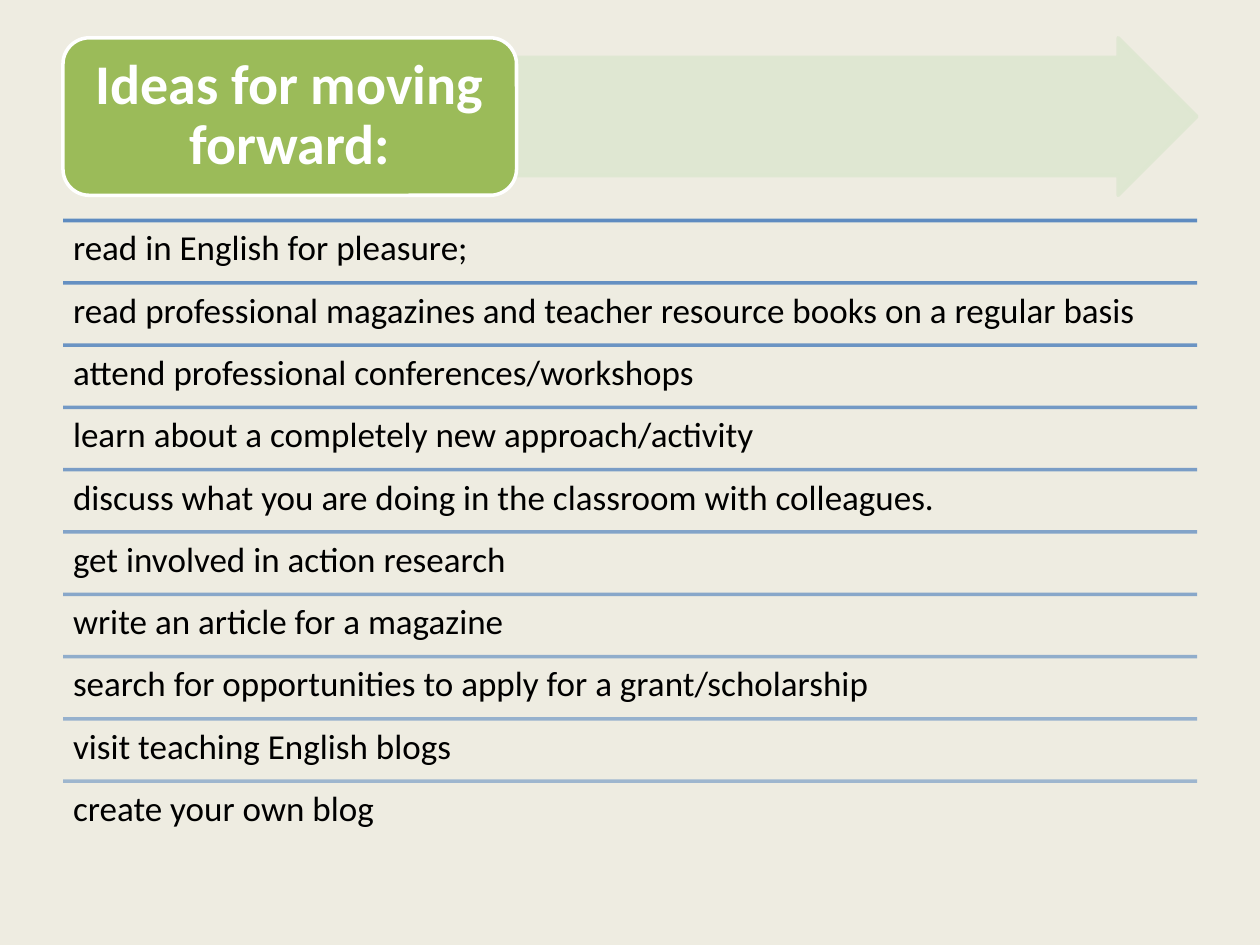
from lxml import etree
from pptx import Presentation
from pptx.dml.color import RGBColor
from pptx.enum.shapes import MSO_CONNECTOR, MSO_SHAPE
from pptx.enum.text import MSO_ANCHOR, PP_ALIGN
from pptx.oxml.ns import qn
from pptx.util import Inches, Pt

ARROW = MSO_SHAPE.RIGHT_ARROW
ROUND = MSO_SHAPE.ROUNDED_RECTANGLE
STRAIGHT = MSO_CONNECTOR.STRAIGHT
TOP, MIDDLE = MSO_ANCHOR.TOP, MSO_ANCHOR.MIDDLE
LEFT, CENTER = PP_ALIGN.LEFT, PP_ALIGN.CENTER

IDEAS = [
    "read in English for pleasure;",
    "read professional magazines and teacher resource books on a regular basis",
    "attend professional conferences/workshops",
    "learn about a completely new approach/activity",
    "discuss what you are doing in the classroom with colleagues.",
    "get involved in action research",
    "write an article for a magazine",
    "search for opportunities to apply for a grant/scholarship",
    "visit teaching English blogs",
    "create your own blog",
]


def rgb(code):
    return RGBColor.from_string(code)


class Board:
    font = "Calibri"
    weight = Pt(2)

    def __init__(self, slide):
        self.slide = slide

    def paint(self, fill, color, alpha=100):
        fill.solid()
        fill.fore_color.rgb = rgb(color)
        if alpha < 100:
            node = fill._xPr.find(qn("a:solidFill"))[0]
            etree.SubElement(node, qn("a:alpha"), val=str(round(alpha * 1000)))

    def shape(self, kind, box, fill, line, alpha=100):
        item = self.slide.shapes.add_shape(kind, *map(Inches, box))
        item.shadow.inherit = False
        self.paint(item.fill, fill, alpha)
        self.paint(item.line.fill, line, alpha)
        item.line.width = self.weight
        return item

    def rule(self, x, y, end, color, alpha):
        ends = map(Inches, (x, y, end, y))
        item = self.slide.shapes.add_connector(STRAIGHT, *ends)
        self.paint(item.line.fill, color, alpha)
        item.line.width = self.weight
        etree.SubElement(item._element.spPr, qn("a:effectLst"))

    def label(self, item, text, size, color, pad, bold=False,
              align=LEFT, anchor=TOP):
        frame = item.text_frame
        side, edge = map(Inches, pad)
        form = {"word_wrap": True, "vertical_anchor": anchor,
                "margin_left": side, "margin_right": side,
                "margin_top": edge, "margin_bottom": edge}
        for name, value in form.items():
            setattr(frame, name, value)
        para = frame.paragraphs[0]
        para.alignment = align
        para.line_spacing = 0.9
        run = para.add_run()
        run.text = text
        look = {"name": self.font, "size": Pt(size), "bold": bold}
        for name, value in look.items():
            setattr(run.font, name, value)
        run.font.color.rgb = rgb(color)

    def text(self, box, *args, **form):
        item = self.slide.shapes.add_textbox(*map(Inches, box))
        self.label(item, *args, **form)


def main():
    deck = Presentation()
    deck.slide_width, deck.slide_height = Inches(10), Inches(7.5)
    slide = deck.slides.add_slide(deck.slide_layouts[6])
    board = Board(slide)
    board.paint(slide.background.fill, "EEECE1")

    # Heading with its arrow
    arrow = board.shape(ARROW, (4.1, 0.3, 5.4, 1.25), "DEE7D1", "DEE7D1", 90)
    arrow.adjustments[0] = 0.75
    head = board.shape(ROUND, (0.5, 0.3, 3.6, 1.25), "9BBB59", "FFFFFF")
    board.label(head, "Ideas for moving forward:", 32, "FFFFFF", (0.13, 0.07),
                bold=True, align=CENTER, anchor=MIDDLE)

    # Ruled list, its lines fading from 90 to 50 percent
    left, top, width = 0.5, 1.75, 9
    gaps = len(IDEAS) - 1
    step = (6.2 - top) / gaps
    for i, idea in enumerate(IDEAS):
        y = top + i * step
        board.rule(left, y, left + width, "4F81BD", 90 - 40 * i / gaps)
        board.text((left, y, width, step), idea, 20, "000000", (0.08, 0.08))

    deck.save("out.pptx")


if __name__ == "__main__":
    main()
